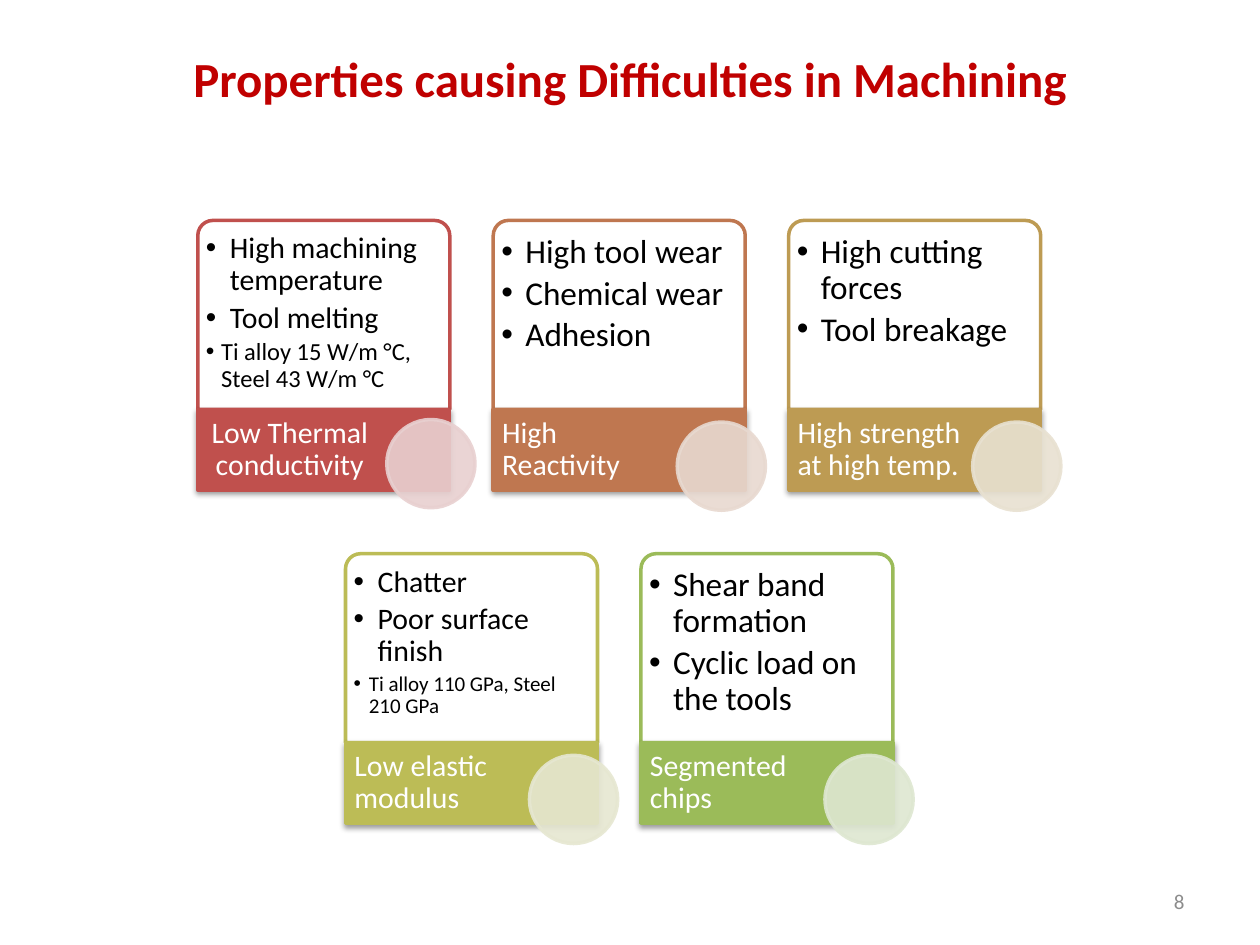
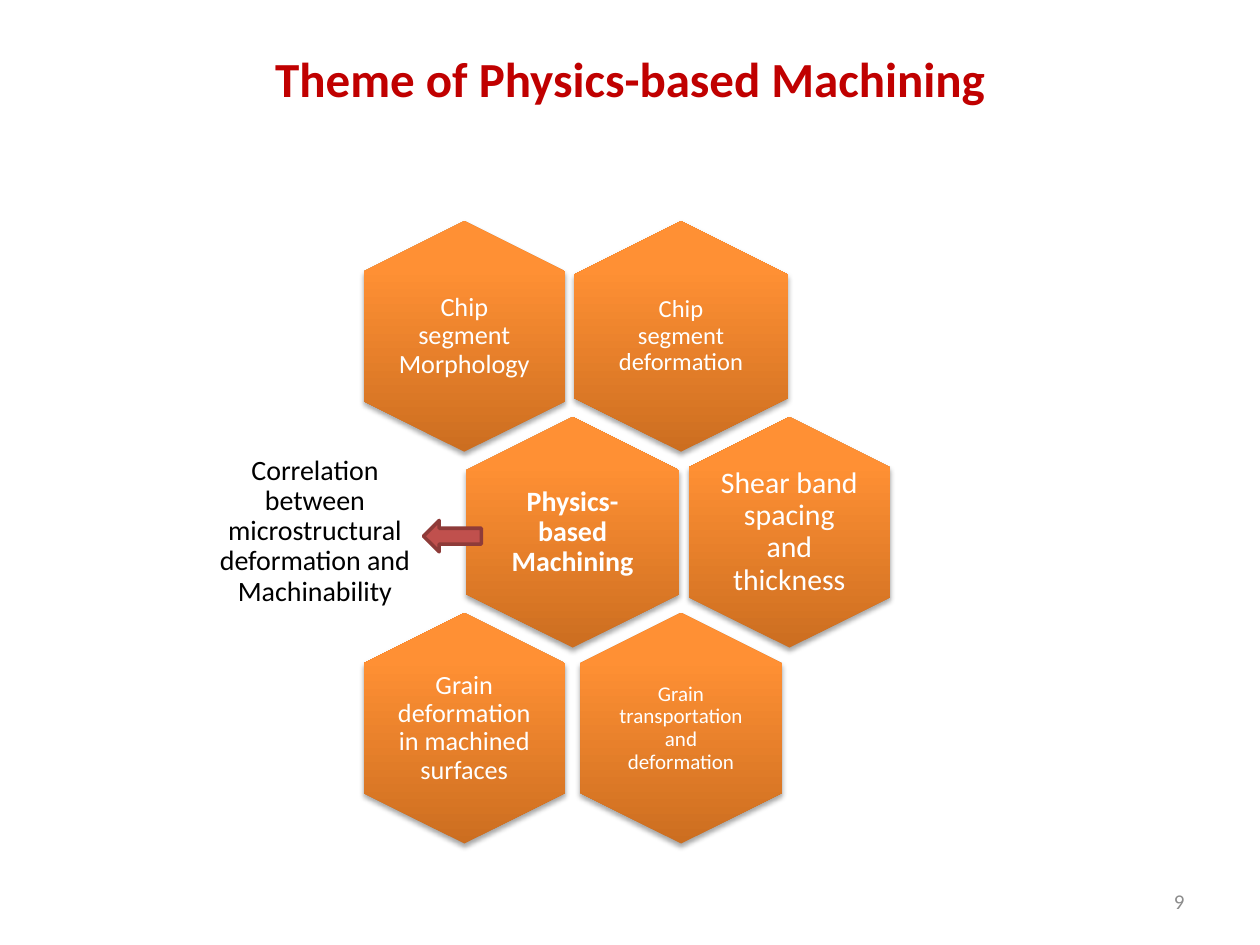
from dataclasses import dataclass

from lxml import etree
from pptx import Presentation
from pptx.dml.color import RGBColor
from pptx.enum.shapes import MSO_SHAPE
from pptx.enum.text import MSO_ANCHOR, PP_ALIGN
from pptx.oxml import parse_xml
from pptx.oxml.ns import nsdecls, qn
from pptx.shapes.autoshape import Shape
from pptx.slide import Slide
from pptx.util import Inches, Pt

LEFT, CENTER, RIGHT = PP_ALIGN.LEFT, PP_ALIGN.CENTER, PP_ALIGN.RIGHT
TOP, MIDDLE = MSO_ANCHOR.TOP, MSO_ANCHOR.MIDDLE
RECTANGLE, OVAL = MSO_SHAPE.RECTANGLE, MSO_SHAPE.OVAL
ROUND_TOP = MSO_SHAPE.ROUND_2_SAME_RECTANGLE
HEXAGON, ARROW = MSO_SHAPE.HEXAGON, MSO_SHAPE.RIGHT_ARROW

SLIDE_W, SLIDE_H = 10, 7.5
FONT = "Calibri"
TITLE_RED, NUMBER_GREY = "C00000", "8C8C8C"
WHITE, BLACK = "FFFFFF", "000000"
ARROW_RED, ARROW_EDGE = "C0504D", "8E3B39"
ORANGE_STOPS = ((0, "CC6E20"), (80, "FF9034"), (100, "FF9136"))

CARD_X, CARD_Y = 1.57, 1.75
CARD_PITCH_X, CARD_PITCH_Y = 2.345, 2.645
CARD_W, BODY_H, BAND_H, BADGE = 2, 1.5, 0.64, 0.7
CARD_PAD = 0.035

CELL_X, CELL_Y = 3.685, 2.67
CELL_PITCH_X, CELL_PITCH_Y = 1.72, 1.555
CELL_H = 1.83


@dataclass(frozen=True)
class Box:
    x: float
    y: float
    w: float
    h: float


@dataclass(frozen=True)
class Line:
    text: str
    size: float
    indent: float = 0


@dataclass(frozen=True)
class Card:
    col: float
    row: int
    color: str
    tint: str
    label: str
    effects: tuple[Line, ...]
    label_align: int = LEFT
    badge_dx: float = 1.46
    badge_dy: float = 1.6


@dataclass(frozen=True)
class Cell:
    col: float
    row: int
    text: str
    size: float
    girth: float = 1.6
    inset: float = 0
    bold: bool = False


def main_effect(text: str, size: float = 19) -> Line:
    return Line(text, size, 0.19)


def figure(text: str, size: float) -> Line:
    return Line(text, size, 0.12)


CARDS = (
    Card(0, 0, "C0504D", "E8D0D0", "Low Thermal conductivity",
         (main_effect("High machining temperature", 17), main_effect("Tool melting", 17),
          figure("Ti alloy 15 W/m °C, Steel 43 W/m °C", 14)), CENTER, 1.5, 1.58),
    Card(1, 0, "BF7750", "E8D9D0", "High Reactivity",
         (main_effect("High tool wear"), main_effect("Chemical wear"), main_effect("Adhesion"))),
    Card(2, 0, "BD9B53", "E8E1D1", "High strength at high temp.",
         (main_effect("High cutting forces"), main_effect("Tool breakage"))),
    Card(0.5, 1, "BCBC56", "E6E7D1", "Low elastic modulus",
         (main_effect("Chatter", 17), main_effect("Poor surface finish", 17),
          figure("Ti alloy 110 GPa, Steel 210 GPa", 12))),
    Card(1.5, 1, "9BBB59", "DEE7D1", "Segmented chips",
         (main_effect("Shear band formation"), main_effect("Cyclic load on the tools"))),
)

CELLS = (
    Cell(1, 0, "Chip segment deformation", 14, 1.7, 0.06),
    Cell(0, 0, "Chip segment Morphology", 15),
    Cell(0.5, 1, "Physics-based Machining", 16, 1.69, 0.07, True),
    Cell(1.5, 1, "Shear band spacing and thickness", 17),
    Cell(1, 2, "Grain transportation and deformation", 12, inset=0.05),
    Cell(0, 2, "Grain deformation in machined surfaces", 15),
)


def rgb(color: str) -> RGBColor:
    return RGBColor.from_string(color)


def set_alpha(fill_xml, percent: int) -> None:
    color = fill_xml.find(".//" + qn("a:srgbClr"))
    etree.SubElement(color, qn("a:alpha")).set("val", str(percent * 1000))


def add_shape(slide: Slide, kind: int, box: Box, fill: str | None = None,
              line: str | None = None, rotation: float = 0) -> Shape:
    shape = slide.shapes.add_shape(kind, Inches(box.x), Inches(box.y), Inches(box.w), Inches(box.h))
    shape.shadow.inherit = False
    shape.rotation = rotation
    if fill:
        shape.fill.solid()
        shape.fill.fore_color.rgb = rgb(fill)
    if line:
        shape.line.color.rgb = rgb(line)
        shape.line.width = Pt(2)
    else:
        shape.line.fill.background()
    return shape


def cast_shadow(shape: Shape, distance: float, percent: int) -> None:
    effects = shape._element.spPr.find(qn("a:effectLst"))
    effects.append(parse_xml(
        f'<a:outerShdw {nsdecls("a")} blurRad="{Pt(3.1)}" dist="{Pt(distance)}" dir="5400000" '
        f'rotWithShape="0"><a:srgbClr val="{BLACK}"><a:alpha val="{percent * 1000}"/>'
        '</a:srgbClr></a:outerShdw>'))


def fill_orange(shape: Shape) -> None:
    stops = "".join(f'<a:gs pos="{at * 1000}"><a:srgbClr val="{color}"/></a:gs>'
                    for at, color in ORANGE_STOPS)
    shape._element.spPr.find(qn("a:prstGeom")).addnext(parse_xml(
        f'<a:gradFill {nsdecls("a")} rotWithShape="0"><a:gsLst>{stops}</a:gsLst>'
        '<a:lin ang="16200000" scaled="0"/></a:gradFill>'))


def add_text(slide: Slide, box: Box, lines: tuple[Line, ...], color: str,
             align: int = LEFT, anchor: int = MIDDLE, bold: bool = False, spacing: float = 0.9,
             insets: tuple[float, float, float, float] = (0.1, 0.05, 0.1, 0.05)) -> None:
    frame = slide.shapes.add_textbox(
        Inches(box.x), Inches(box.y), Inches(box.w), Inches(box.h)).text_frame
    frame.word_wrap = True
    frame.vertical_anchor = anchor
    frame.margin_left, frame.margin_top, frame.margin_right, frame.margin_bottom = map(Inches, insets)
    frame.text = "\n".join(line.text for line in lines)
    for paragraph, line in zip(frame.paragraphs, lines):
        paragraph.alignment = align
        paragraph.line_spacing = spacing
        font = paragraph.runs[0].font
        font.name, font.size, font.bold = FONT, Pt(line.size), bold
        font.color.rgb = rgb(color)
        if line.indent:
            paragraph.space_after = Pt(round(line.size * 0.17, 1))
            props = paragraph._p.get_or_add_pPr()
            props.set("marL", str(Inches(line.indent)))
            props.set("indent", str(-Inches(line.indent)))
            etree.SubElement(props, qn("a:buFont")).set("typeface", "Arial")
            etree.SubElement(props, qn("a:buChar")).set("char", "•")


def new_slide(deck: Presentation, title: str, number: int) -> Slide:
    slide = deck.slides.add_slide(deck.slide_layouts[6])
    add_text(slide, Box(SLIDE_W * 0.05, SLIDE_H * 0.04, SLIDE_W * 0.9, 0.64),
             (Line(title, 28),), TITLE_RED, CENTER, bold=True, spacing=1)
    add_text(slide, Box(7.17, 6.95, 2.33, 0.4), (Line(str(number), 12),),
             NUMBER_GREY, RIGHT, spacing=1)
    return slide


def draw_card(slide: Slide, card: Card) -> None:
    x = CARD_X + card.col * CARD_PITCH_X
    y = CARD_Y + card.row * CARD_PITCH_Y
    body = add_shape(slide, ROUND_TOP, Box(x, y, CARD_W, BODY_H), WHITE, card.color)
    body.adjustments[0] = 0.08
    set_alpha(body._element.spPr.find(qn("a:solidFill")), 90)
    top_inset = 0.08 if card.effects[0].size > 17 else 0.065
    add_text(slide, Box(x + CARD_PAD, y + CARD_PAD, CARD_W - 2 * CARD_PAD, BODY_H - CARD_PAD),
             card.effects, BLACK, anchor=TOP, insets=(0.03, top_inset, 0.03, 0.03))

    band_y = y + BODY_H
    band = add_shape(slide, RECTANGLE, Box(x, band_y, CARD_W, BAND_H), card.color, card.color)
    cast_shadow(band, 1.6, 38)
    add_text(slide, Box(x, band_y, 1.41, BAND_H), (Line(card.label, 17),), WHITE,
             card.label_align, insets=(0.07, 0, 0.02, 0))

    badge = add_shape(slide, OVAL, Box(x + card.badge_dx, y + card.badge_dy, BADGE, BADGE),
                      card.tint, card.tint)
    set_alpha(badge._element.spPr.find(qn("a:solidFill")), 90)
    set_alpha(badge._element.spPr.find(qn("a:ln")), 90)


def draw_cell(slide: Slide, cell: Cell) -> None:
    x = CELL_X + cell.col * CELL_PITCH_X
    y = CELL_Y + cell.row * CELL_PITCH_Y
    hexagon = add_shape(slide, HEXAGON,
                        Box(x - CELL_H / 2, y - cell.girth / 2, CELL_H, cell.girth), rotation=90)
    hexagon.adjustments[0] = 0.25
    fill_orange(hexagon)
    cast_shadow(hexagon, 1.8, 35)
    text_w, text_h = cell.girth * 0.685, 1.26
    add_text(slide, Box(x - text_w / 2, y - text_h / 2, text_w, text_h),
             (Line(cell.text, cell.size),), WHITE, CENTER, bold=cell.bold, insets=(cell.inset,) * 4)


def build_properties(deck: Presentation) -> None:
    slide = new_slide(deck, "Properties causing Difficulties in Machining", 8)
    for card in CARDS:
        draw_card(slide, card)


def build_theme(deck: Presentation) -> None:
    slide = new_slide(deck, "Theme of Physics-based Machining", 9)
    for cell in CELLS:
        draw_cell(slide, cell)
    outcome = "Correlation between microstructural deformation and Machinability"
    add_text(slide, Box(1.51, 3.67, 1.98, 1.1), (Line(outcome, 16),), BLACK, CENTER,
             insets=(0.07,) * 4)
    add_shape(slide, ARROW, Box(3.36, 4.13, 0.46, 0.25), ARROW_RED, ARROW_EDGE, rotation=180)


def main() -> None:
    deck = Presentation()
    deck.slide_width, deck.slide_height = Inches(SLIDE_W), Inches(SLIDE_H)
    build_properties(deck)
    build_theme(deck)
    deck.save("out.pptx")


if __name__ == "__main__":
    main()
